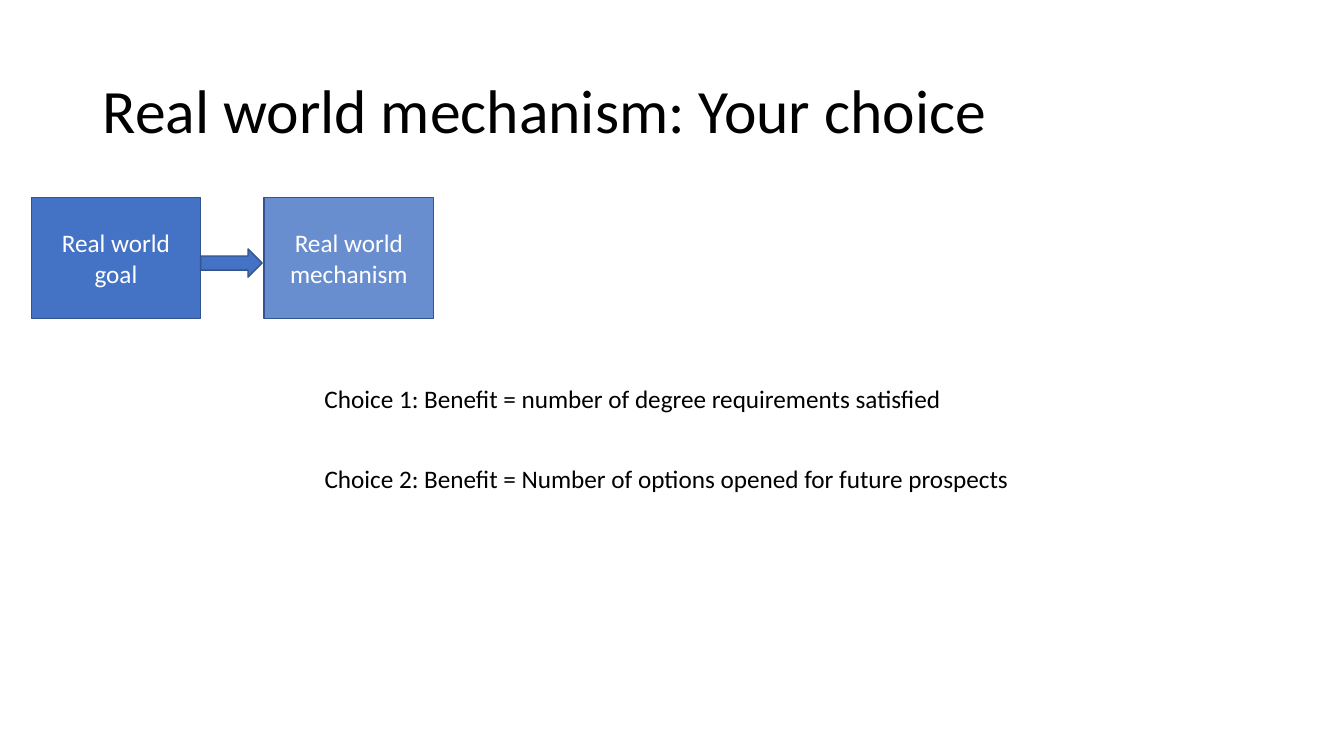
"""Build the slide on choosing a real world mechanism."""
from lxml.etree import SubElement
from pptx import Presentation
from pptx.dml.color import RGBColor
from pptx.enum.shapes import MSO_SHAPE
from pptx.enum.text import MSO_ANCHOR, PP_ALIGN
from pptx.oxml.ns import qn
from pptx.util import Inches, Pt

BLUE, OUTLINE, WHITE, BLACK = "4472C4", "325491", "FFFFFF", "000000"
BOX_LEFT, BOX_TOP, BOX_WIDTH, BOX_HEIGHT = 0.31, 1.96, 1.68, 1.2
BOX_PITCH = 2.31
ARROW_WIDTH, ARROW_HEIGHT = 0.61, 0.28
CHOICE_LEFT, CHOICE_TOP, CHOICE_PITCH = 3.12, 3.75, 0.8


def write(shape, text, size, color):
    """Put one formatted paragraph into a shape and return it."""
    shape.text_frame.text = text
    paragraph = shape.text_frame.paragraphs[0]
    font = paragraph.runs[0].font
    font.name, font.size = "Calibri", Pt(size)
    font.color.rgb = RGBColor.from_string(color)
    return paragraph


def add_block(kind, left, top, width, height):
    """Add a blue outlined shape without shadow."""
    shape = slide.shapes.add_shape(kind, Inches(left), Inches(top), Inches(width), Inches(height))
    shape.shadow.inherit = False
    shape.fill.solid()
    shape.fill.fore_color.rgb = RGBColor.from_string(BLUE)
    shape.line.color.rgb = RGBColor.from_string(OUTLINE)
    shape.line.width = Pt(1)
    return shape


presentation = Presentation()
presentation.slide_width, presentation.slide_height = Inches(13.33), Inches(7.5)
slide = presentation.slides.add_slide(presentation.slide_layouts[6])

for column, (label, opacity) in enumerate([("Real world goal", 100), ("Real world mechanism", 80)]):
    box = add_block(MSO_SHAPE.RECTANGLE, BOX_LEFT + column * BOX_PITCH, BOX_TOP, BOX_WIDTH, BOX_HEIGHT)
    box.text_frame.word_wrap = True
    box.text_frame.vertical_anchor = MSO_ANCHOR.MIDDLE
    write(box, label, 18, WHITE).alignment = PP_ALIGN.CENTER
    if opacity < 100:
        fill_color = box.fill._xPr.find(qn("a:solidFill"))[0]
        SubElement(fill_color, qn("a:alpha"), val=str(opacity * 1000))

add_block(MSO_SHAPE.RIGHT_ARROW, BOX_LEFT + BOX_WIDTH, 2.47, ARROW_WIDTH, ARROW_HEIGHT)

title = slide.shapes.add_textbox(Inches(0.92), Inches(0.4), Inches(11.5), Inches(1.45))
title.text_frame.word_wrap = True
title.text_frame.vertical_anchor = MSO_ANCHOR.MIDDLE
write(title, "Real world mechanism: Your choice", 44, BLACK).line_spacing = 0.9

choices = [
    ("Choice 1: Benefit = number of degree requirements satisfied", 6.4),
    ("Choice 2: Benefit = Number of options opened for future prospects", 7.08),
]
for row, (text, width) in enumerate(choices):
    top = CHOICE_TOP + row * CHOICE_PITCH
    choice = slide.shapes.add_textbox(Inches(CHOICE_LEFT), Inches(top), Inches(width), Inches(0.4))
    choice.text_frame.word_wrap = False
    write(choice, text, 18, BLACK)

presentation.save("out.pptx")
